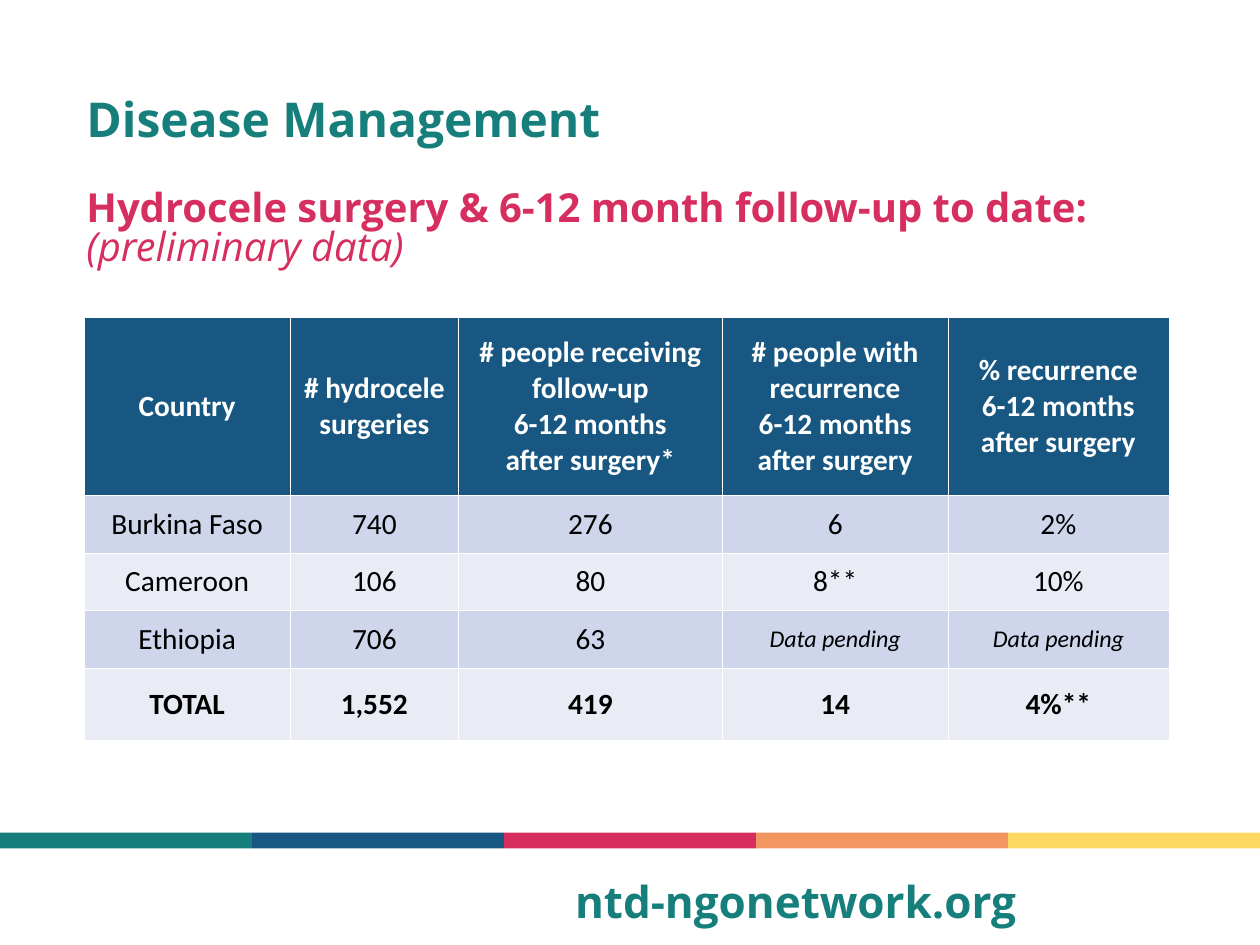
from dataclasses import dataclass

from pptx import Presentation
from pptx.dml.color import RGBColor
from pptx.enum.shapes import MSO_SHAPE
from pptx.enum.text import MSO_ANCHOR, PP_ALIGN
from pptx.util import Inches, Pt


@dataclass(frozen=True)
class Theme:
    teal: str = "177F7B"
    blue: str = "175781"
    pink: str = "D62F5F"
    orange: str = "F29661"
    yellow: str = "FFD863"
    white: str = "FFFFFF"
    black: str = "000000"
    band_dark: str = "CFD5EA"
    band_light: str = "E9EBF5"
    heading_font: str = "Open Sans"
    table_font: str = "Calibri"
    title_size: int = 72
    website_size: int = 66
    subtitle_size: int = 60
    table_size: int = 44
    pending_size: int = 36


theme = Theme()
WIDTH, HEIGHT = 26.25, 19.69
MARGIN = WIDTH / 15

presentation = Presentation()
presentation.slide_width = Inches(WIDTH)
presentation.slide_height = Inches(HEIGHT)
slide = presentation.slides.add_slide(presentation.slide_layouts[6])


def style(paragraph, font_name, size, color, bold=None):
    font = paragraph.font
    font.name, font.size, font.bold = font_name, Pt(size), bold
    font.color.rgb = RGBColor.from_string(color)


def add_heading(left, top, width, height, runs, size, color, spacing, anchor):
    """Add one heading paragraph made of (text, bold, italic) runs."""
    box = slide.shapes.add_textbox(*map(Inches, (left, top, width, height)))
    frame = box.text_frame
    frame.word_wrap = True
    frame.vertical_anchor = anchor
    frame.margin_left = frame.margin_right = Inches(0.05)
    frame.margin_top = frame.margin_bottom = 0
    paragraph = frame.paragraphs[0]
    paragraph.line_spacing = spacing
    style(paragraph, theme.heading_font, size, color)
    for text, bold, italic in runs:
        run = paragraph.add_run()
        run.text = text
        run.font.bold, run.font.italic = bold, italic


# Footer: five equal stripes and the website
stripe_colors = (theme.teal, theme.blue, theme.pink, theme.orange, theme.yellow)
stripe_width = WIDTH / len(stripe_colors)
for index, color in enumerate(stripe_colors):
    stripe = slide.shapes.add_shape(
        MSO_SHAPE.RECTANGLE, Inches(index * stripe_width), Inches(17.35),
        Inches(stripe_width), Inches(0.33))
    stripe.shadow.inherit = False
    stripe.fill.solid()
    stripe.fill.fore_color.rgb = RGBColor.from_string(color)
    stripe.line.fill.background()

add_heading(11.93, 17.85, 11.3, 1.98, [("ntd-ngonetwork.org", True, False)],
            theme.website_size, theme.teal, 0.9, MSO_ANCHOR.MIDDLE)

# Headings
heading_width = WIDTH - 2 * MARGIN
add_heading(MARGIN, 2.01, heading_width, 1.76, [("Disease Management", True, False)],
            theme.title_size, theme.teal, 0.9, MSO_ANCHOR.TOP)
add_heading(MARGIN, 4, heading_width, 1.8,
            [("Hydrocele surgery & 6-12 month follow-up to date: ", True, False),
             ("(preliminary data)", False, True)],
            theme.subtitle_size, theme.pink, 0.8, MSO_ANCHOR.TOP)

# Surgery results by country
PENDING = "Data pending"
results = [
    ("Country", "# hydrocele surgeries",
     "# people receiving follow-up\n6-12 months\nafter surgery*",
     "# people with recurrence\n6-12 months after surgery",
     "% recurrence\n6-12 months after surgery"),
    ("Burkina Faso", "740", "276", "6", "2%"),
    ("Cameroon", "106", "80", "8**", "10%"),
    ("Ethiopia", "706", "63", PENDING, PENDING),
    ("TOTAL", "1,552", "419", "14", "4%**"),
]
column_widths = (4.3, 3.5, 5.5, 4.7, 4.6)
row_heights = (3.7, 1.2, 1.2, 1.2, 1.5)
table = slide.shapes.add_table(
    len(row_heights), len(column_widths), Inches(MARGIN), Inches(6.62),
    Inches(sum(column_widths)), Inches(sum(row_heights))).table
for column, width in zip(table.columns, column_widths):
    column.width = Inches(width)

last_row = len(results) - 1
for row_index, (values, height) in enumerate(zip(results, row_heights)):
    table.rows[row_index].height = Inches(height)
    is_header = row_index == 0
    band = theme.band_dark if row_index % 2 else theme.band_light
    for column_index, value in enumerate(values):
        cell = table.cell(row_index, column_index)
        cell.fill.solid()
        cell.fill.fore_color.rgb = RGBColor.from_string(theme.blue if is_header else band)
        cell.vertical_anchor = MSO_ANCHOR.MIDDLE
        paragraph = cell.text_frame.paragraphs[0]
        paragraph.text = value
        paragraph.alignment = PP_ALIGN.CENTER
        style(paragraph, theme.table_font,
              theme.pending_size if value == PENDING else theme.table_size,
              theme.white if is_header else theme.black,
              bold=row_index in (0, last_row))
        paragraph.font.italic = value == PENDING

presentation.save("out.pptx")
